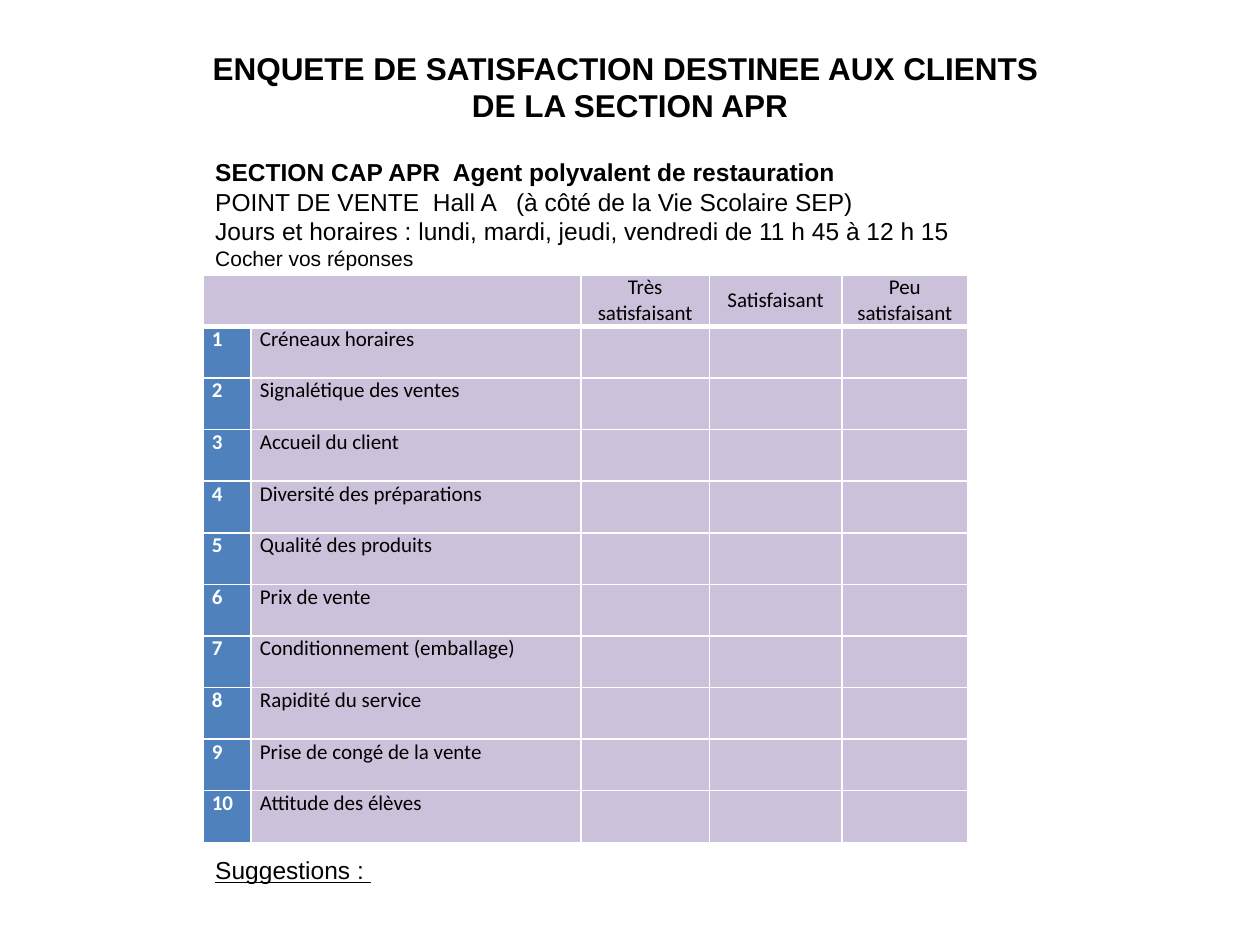
"""Build the customer satisfaction survey slide of the APR section."""
from lxml.etree import SubElement
from pptx import Presentation
from pptx.dml.color import RGBColor
from pptx.enum.text import MSO_ANCHOR as Anchor, PP_ALIGN as Align
from pptx.oxml.ns import qn
from pptx.util import Cm, Pt

BLACK = RGBColor(0x00, 0x00, 0x00)
WHITE = RGBColor(0xFF, 0xFF, 0xFF)
BLUE = RGBColor(0x4F, 0x81, 0xBD)
LILAC = RGBColor(0xCC, 0xC1, 0xDA)

TITLE = "ENQUETE DE SATISFACTION DESTINEE AUX CLIENTS \vDE LA SECTION APR"
INTRO = [
    ("SECTION CAP APR  Agent polyvalent de restauration", 14, True),
    ("POINT DE VENTE  Hall A   (à côté de la Vie Scolaire SEP)", 14, False),
    ("Jours et horaires : lundi, mardi, jeudi, vendredi de 11 h 45 à 12 h 15", 14, False),
    ("Cocher vos réponses", 12, False),
]
RATINGS = ["Très satisfaisant", "Satisfaisant", "Peu satisfaisant"]
CRITERIA = [
    "Créneaux horaires",
    "Signalétique des ventes",
    "Accueil du client",
    "Diversité des préparations",
    "Qualité des produits",
    "Prix de vente",
    "Conditionnement (emballage)",
    "Rapidité du service",
    "Prise de congé de la vente",
    "Attitude des élèves",
]
SUGGESTIONS = "Suggestions : "

LEFT = 4.09
COLUMN_WIDTHS = [0.97, 6.65, 2.59, 2.67, 2.54]
ROW_HEIGHT = 1.04


def write(para, text, color=BLACK, **font):
    para.text = text
    for span in para.runs:
        span.font.color.rgb = color
        for name, value in font.items():
            setattr(span.font, name, value)


def place(shape, left, top, width, height):
    shape.left, shape.top, shape.width, shape.height = map(Cm, (left, top, width, height))


def add_box(page, left, top, width, height, wrap):
    box = page.shapes.add_textbox(Cm(left), Cm(top), Cm(width), Cm(height))
    box.text_frame.word_wrap = wrap
    return box.text_frame


def draw_borders(cell, widths):
    properties = cell._tc.get_or_add_tcPr()
    for side, width in widths.items():
        line = SubElement(properties, qn(f"a:ln{side}"), w=str(Pt(width)))
        fill = SubElement(line, qn("a:solidFill"))
        SubElement(fill, qn("a:srgbClr"), val=str(WHITE))


def format_cell(cell, row, column):
    draw_borders(cell, {"L": 1, "R": 1, "T": 3 if row == 1 else 1, "B": 1 if row else 3})
    cell.fill.solid()
    cell.fill.fore_color.rgb = BLUE if row and column == 0 else LILAC
    cell.margin_left = cell.margin_right = Cm(0.18)
    cell.margin_top = cell.margin_bottom = 0
    cell.vertical_anchor = Anchor.TOP if row else Anchor.MIDDLE


def add_survey(page):
    rows = [["", ""] + RATINGS]
    rows += [[str(number), name, "", "", ""] for number, name in enumerate(CRITERIA, 1)]
    frame = page.shapes.add_table(
        len(rows), len(COLUMN_WIDTHS), Cm(LEFT), Cm(5.54),
        Cm(sum(COLUMN_WIDTHS)), Cm(ROW_HEIGHT * len(rows)))
    table = frame.table
    for column, width in zip(table.columns, COLUMN_WIDTHS):
        column.width = Cm(width)
    for row, texts in enumerate(rows):
        table.rows[row].height = Cm(ROW_HEIGHT)
        for column, text in enumerate(texts):
            cell = table.cell(row, column)
            format_cell(cell, row, column)
            if text:
                para = cell.text_frame.paragraphs[0]
                para.alignment = Align.LEFT if row else Align.CENTER
                numbered = row > 0 and column == 0
                write(para, text, WHITE if numbered else BLACK,
                      name="Calibri", size=Pt(12), bold=numbered)
    table.cell(0, 0).merge(table.cell(0, 1))


def main():
    deck = Presentation()
    deck.slide_width, deck.slide_height = Cm(25.4), Cm(19.05)
    page = deck.slides.add_slide(deck.slide_layouts[5])

    title = page.shapes.title
    place(title, 1.27, 0.76, 22.86, 1.96)
    title.text_frame.vertical_anchor = Anchor.MIDDLE
    heading = title.text_frame.paragraphs[0]
    heading.alignment = Align.CENTER
    write(heading, TITLE, name="Arial", size=Pt(18), bold=True)

    add_survey(page)

    intro = add_box(page, LEFT, 2.97, 19, 3.07, True)
    intro.margin_top = Cm(0.2)
    for index, (text, size, bold) in enumerate(INTRO):
        para = intro.add_paragraph() if index else intro.paragraphs[0]
        write(para, text, name="Arial", size=Pt(size), bold=bold)

    suggestions = add_box(page, LEFT, 17.12, 3.66, 0.86, False)
    write(suggestions.paragraphs[0], SUGGESTIONS, name="Arial", size=Pt(14), underline=True)

    deck.save("out.pptx")


if __name__ == "__main__":
    main()
